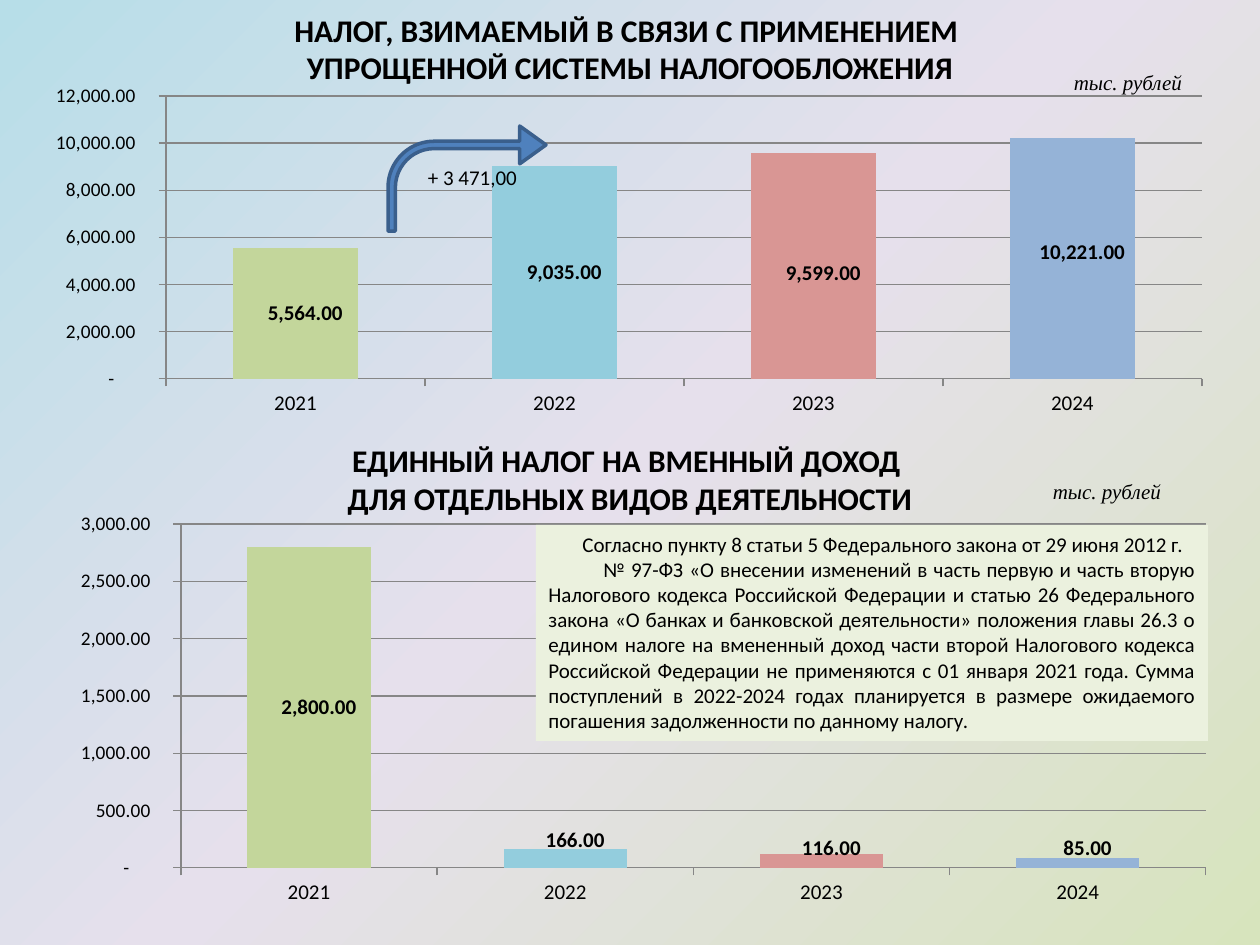
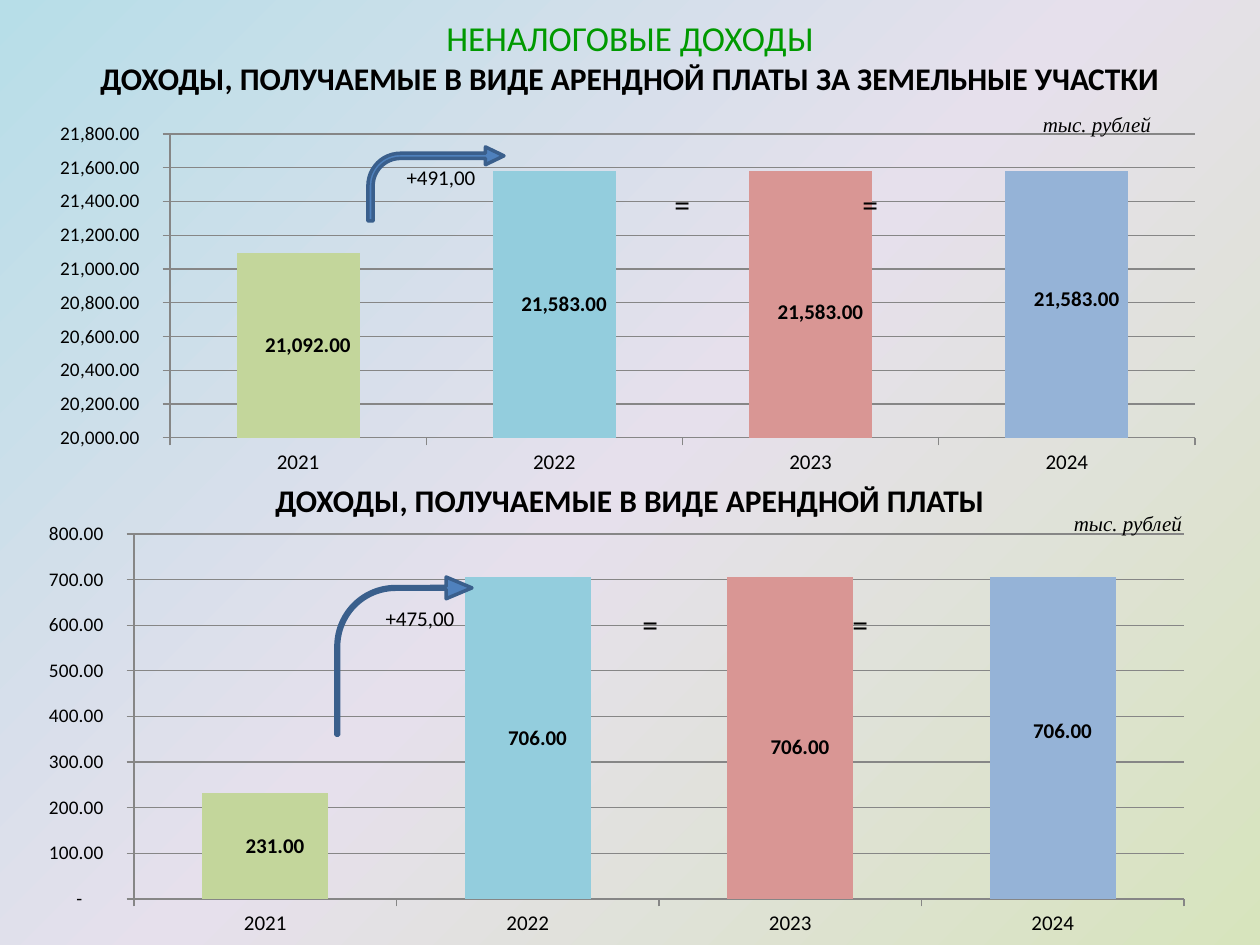
from copy import deepcopy

from pptx import Presentation
from pptx.chart.data import CategoryChartData
from pptx.dml.color import RGBColor
from pptx.enum.chart import XL_CHART_TYPE, XL_LABEL_POSITION, XL_TICK_MARK
from pptx.enum.shapes import MSO_SHAPE
from pptx.enum.text import MSO_ANCHOR, MSO_AUTO_SIZE, PP_ALIGN
from pptx.oxml import parse_xml
from pptx.oxml.ns import nsdecls
from pptx.util import Emu, Pt

PX = 914400 / 126
COLORS = {
    "text": "000000", "green": "009900", "grid": "868686", "note": "EBF1DE",
    "arrow": "4F81BD", "arrow_line": "3A5F8C",
    "near": "D7E4BD", "middle": "E6E0EC", "far": "B7DEE8",
}
BAR_COLORS = ["C3D69B", "93CDDD", "D99694", "95B3D7"]
YEARS = ["2021", "2022", "2023", "2024"]
NUMBER_FORMAT = (r'_-* #,##0.00\ _₽_-;\-* #,##0.00\ _₽_-;'
                 r'_-* "-"??\ _₽_-;_-@_-')
HEADING = {"size": Pt(18), "bold": True}
SECTION = {"size": Pt(20), "bold": False, "color": "green"}
PLAIN = {"size": Pt(12)}
UNIT = {"size": Pt(12), "italic": True, "name": "Times New Roman"}
EQUALS = {"size": Pt(18)}
LABEL_SHIFT = 17


def px(value):
    return Emu(round(value * PX))


def color(name):
    return RGBColor.from_string(COLORS.get(name, name))


def set_font(font, style):
    values = {"name": "Calibri", "color": "text", **style}
    font.color.rgb = color(values.pop("color"))
    for key, value in values.items():
        setattr(font, key, value)


def place(shape, box):
    for key, value in zip(("left", "top", "width", "height"), box):
        setattr(shape, key, px(value))


def write(shape, lines, align=PP_ALIGN.CENTER, anchor=MSO_ANCHOR.TOP):
    """Fill a shape with (text, style) lines."""
    frame = shape.text_frame
    settings = {"word_wrap": True, "auto_size": MSO_AUTO_SIZE.NONE,
                "vertical_anchor": anchor}
    for key, value in settings.items():
        setattr(frame, key, value)
    for number, (text, style) in enumerate(lines):
        para = frame.add_paragraph() if number else frame.paragraphs[0]
        para.alignment = align
        span = para.add_run()
        span.text = text
        set_font(span.font, style)


def add_text(page, box, text, style, align=PP_ALIGN.CENTER):
    shape = page.shapes.add_textbox(*map(px, box))
    write(shape, [(text, style)], align)


def add_unit(page, left, top):
    add_text(page, (left, top, 198, 38), "тыс. рублей", UNIT)


def add_equals(page, lefts, top):
    for left in lefts:
        add_text(page, (left, top, 42, 50), "=", EQUALS, PP_ALIGN.LEFT)


def add_page(deck, box, lines):
    page = deck.slides.add_slide(deck.slide_layouts[5])
    title = page.shapes.title
    place(title, box)
    write(title, lines, anchor=MSO_ANCHOR.MIDDLE)
    return page


def add_heading(page, box, lines):
    shape = page.shapes.add_textbox(*map(px, box))
    write(shape, [(line, HEADING) for line in lines], anchor=MSO_ANCHOR.MIDDLE)


def paint_background(deck):
    fill = deck.slide_master.background.fill
    fill.solid()
    holder = deck.slide_master.element.cSld.bg.bgPr
    stops = "".join(
        f'<a:gs pos="{position}"><a:srgbClr val="{COLORS[name]}"/></a:gs>'
        for position, name in ((0, "near"), (50000, "middle"), (100000, "far")))
    gradient = parse_xml(
        f'<a:gradFill {nsdecls("a")} rotWithShape="1"><a:gsLst>{stops}</a:gsLst>'
        '<a:path path="circle"><a:fillToRect l="100000" t="100000"/></a:path>'
        '</a:gradFill>')
    holder.replace(holder[0], gradient)


def set_plot_area(chart, box, plot):
    """Fix the inner plot area, with plot given in px inside the box."""
    width, height = box[2:]
    parts = zip("xywh", plot, (width, height, width, height))
    sizes = "".join(f'<c:{key} val="{value / whole:.4f}"/>'
                    for key, value, whole in parts)
    layout = parse_xml(
        f'<c:layout {nsdecls("c")}><c:manualLayout>'
        '<c:layoutTarget val="inner"/><c:xMode val="edge"/><c:yMode val="edge"/>'
        f'{sizes}</c:manualLayout></c:layout>')
    area = chart.element.chart.plotArea
    for old in area.findall(layout.tag):
        area.remove(old)
    area.insert(0, layout)


def move_labels(labels, box, shifts):
    """Shift each value label from the centre of its column."""
    parent = labels._element
    shared = [child for child in parent
              if not child.tag.endswith("showLeaderLines")]
    for index, shift in enumerate(shifts):
        label = parse_xml(
            f'<c:dLbl {nsdecls("c")}><c:idx val="{index}"/><c:layout><c:manualLayout>'
            f'<c:x val="{LABEL_SHIFT / box[2]:.4f}"/><c:y val="{shift / box[3]:.4f}"/>'
            '</c:manualLayout></c:layout></c:dLbl>')
        label.extend([deepcopy(child) for child in shared])
        parent.insert(index, label)


def add_column_chart(page, box, plot, values, scale, shifts):
    data = CategoryChartData()
    data.categories = YEARS
    data.add_series("Series 1", values)
    chart = page.shapes.add_chart(
        XL_CHART_TYPE.COLUMN_STACKED, *map(px, box), data).chart
    chart.has_legend = chart.has_title = False
    set_font(chart.font, {"size": Pt(18)})
    set_plot_area(chart, box, plot)

    # Axes
    axis = chart.value_axis
    for key, value in zip(("minimum_scale", "maximum_scale", "major_unit"), scale):
        setattr(axis, key, value)
    axis.tick_labels.number_format = NUMBER_FORMAT
    axis.tick_labels.number_format_is_linked = False
    lines = [axis.major_gridlines.format.line]
    for one, size in ((axis, 11), (chart.category_axis, 12)):
        one.major_tick_mark = XL_TICK_MARK.OUTSIDE
        one.minor_tick_mark = XL_TICK_MARK.NONE
        set_font(one.tick_labels.font, {"size": Pt(size)})
        lines.append(one.format.line)
    for line in lines:
        line.color.rgb = color("grid")
        line.width = Pt(0.75)

    # Columns and their values
    columns = chart.plots[0]
    for key, value in {"gap_width": 108, "overlap": 100,
                       "vary_by_categories": False}.items():
        setattr(columns, key, value)
    series = columns.series[0]
    for index, fill_color in enumerate(BAR_COLORS):
        fill = series.points[index].format.fill
        fill.solid()
        fill.fore_color.rgb = color(fill_color)
    labels = series.data_labels
    for key, value in {"show_value": True, "number_format": NUMBER_FORMAT,
                       "number_format_is_linked": False,
                       "position": XL_LABEL_POSITION.CENTER}.items():
        setattr(labels, key, value)
    set_font(labels.font, {"size": Pt(12), "bold": True})
    move_labels(labels, box, shifts)


def add_growth_arrow(page, box, adjustments):
    arrow = page.shapes.add_shape(MSO_SHAPE.BENT_ARROW, *map(px, box))
    arrow.shadow.inherit = False
    arrow.fill.solid()
    arrow.fill.fore_color.rgb = color("arrow")
    arrow.line.color.rgb = color("arrow_line")
    arrow.line.width = Pt(2)
    for index, value in enumerate(adjustments):
        arrow.adjustments[index] = value


def add_note(page, box, texts, indents):
    note = page.shapes.add_shape(MSO_SHAPE.RECTANGLE, *map(px, box))
    note.shadow.inherit = False
    note.fill.solid()
    note.fill.fore_color.rgb = color("note")
    note.line.fill.background()
    write(note, [(text, PLAIN) for text in texts], PP_ALIGN.JUSTIFY)
    for para, indent in zip(note.text_frame.paragraphs, indents):
        para._p.get_or_add_pPr().set("indent", str(px(indent)))


def build_tax_page(deck):
    page = add_page(deck, (42, 0, 1176, 97), [
        ("НАЛОГ, ВЗИМАЕМЫЙ В СВЯЗИ С ПРИМЕНЕНИЕМ ", HEADING),
        ("УПРОЩЕННОЙ СИСТЕМЫ НАЛОГООБЛОЖЕНИЯ", HEADING)])

    # Simplified taxation
    add_column_chart(page, (32, 84, 1187, 368), (134, 12, 1036, 283),
                     [5564, 9035, 9599, 10221], (0, 12000, 2000), (0, 0, 8, -6))
    add_text(page, (399, 158, 147, 38), "+ 3 471,00", PLAIN)
    add_growth_arrow(page, (388, 126, 158, 105), (0.07, 0.18, 0.25, 0.44))
    add_unit(page, 1029, 63)

    # Tax on imputed income
    add_column_chart(page, (53, 504, 1176, 410), (128, 20, 1025, 344),
                     [2800, 166, 116, 85], (0, 3000, 500), (0, -18, -13, -15))
    add_heading(page, (0, 430, 1260, 97), [
        "ЕДИННЫЙ НАЛОГ НА ВМЕННЫЙ ДОХОД ", "ДЛЯ ОТДЕЛЬНЫХ ВИДОВ ДЕЯТЕЛЬНОСТИ"])
    add_note(page, (536, 525, 672, 216), [
        "Согласно пункту 8 статьи 5 Федерального закона от 29 июня 2012 г.",
        "№ 97-ФЗ «О внесении изменений в часть первую и часть вторую Налогового "
        "кодекса Российской Федерации и статью 26 Федерального закона «О банках и "
        "банковской деятельности» положения главы 26.3 о едином налоге на "
        "вмененный доход части второй Налогового кодекса Российской Федерации не "
        "применяются с 01 января 2021 года. Сумма поступлений в 2022-2024 годах "
        "планируется в размере ожидаемого погашения задолженности по данному "
        "налогу."], (34, 55))
    add_unit(page, 1008, 472)


def build_rent_page(deck):
    page = add_page(deck, (42, 8, 1176, 97), [
        ("НЕНАЛОГОВЫЕ ДОХОДЫ", SECTION),
        ("ДОХОДЫ, ПОЛУЧАЕМЫЕ В ВИДЕ АРЕНДНОЙ ПЛАТЫ ЗА ЗЕМЕЛЬНЫЕ УЧАСТКИ", HEADING)])

    # Land rent
    add_column_chart(page, (32, 116, 1187, 368), (138, 18, 1025, 304),
                     [21092, 21583, 21583, 21583], (20000, 21800, 200),
                     (0, 0, 8, -5))
    add_text(page, (378, 158, 126, 38), "+491,00", PLAIN)
    add_growth_arrow(page, (368, 147, 136, 74), (0.07, 0.12, 0.25, 0.44))
    add_unit(page, 998, 105)
    add_equals(page, (662, 850), 179)

    # Other rent
    add_heading(page, (42, 451, 1176, 97),
                ["ДОХОДЫ, ПОЛУЧАЕМЫЕ В ВИДЕ АРЕНДНОЙ ПЛАТЫ"])
    add_column_chart(page, (21, 514, 1187, 431), (113, 20, 1050, 365),
                     [231, 706, 706, 706], (0, 800, 100), (0, 0, 9, -7))
    add_growth_arrow(page, (336, 577, 136, 158), (0.02, 0.08, 0.19, 0.44))
    add_text(page, (357, 599, 126, 38), "+475,00", PLAIN)
    add_equals(page, (630, 840), 599)
    add_unit(page, 1029, 504)


def main():
    deck = Presentation()
    deck.slide_width, deck.slide_height = px(1260), px(945)
    paint_background(deck)
    build_tax_page(deck)
    build_rent_page(deck)
    deck.save("out.pptx")


if __name__ == "__main__":
    main()
